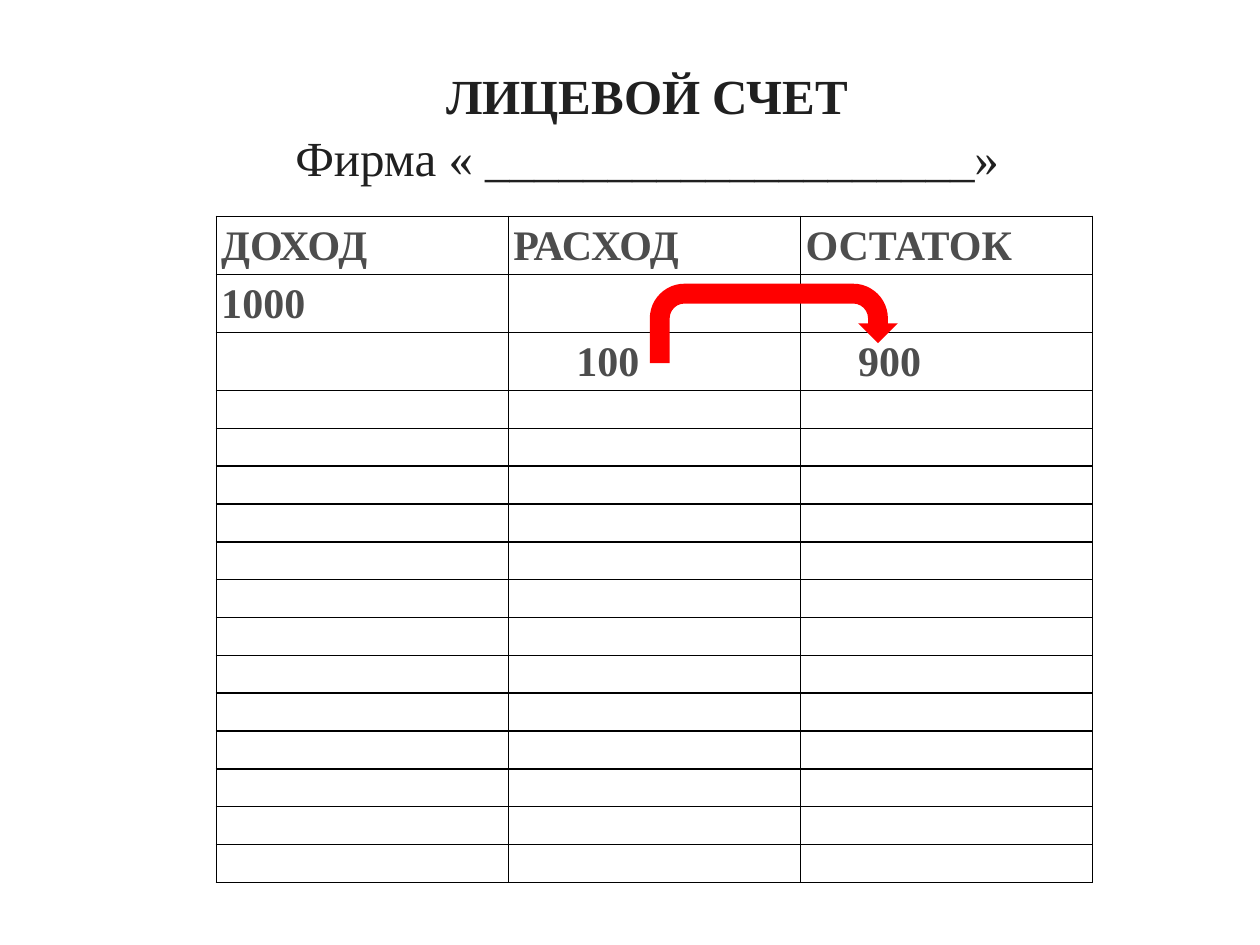
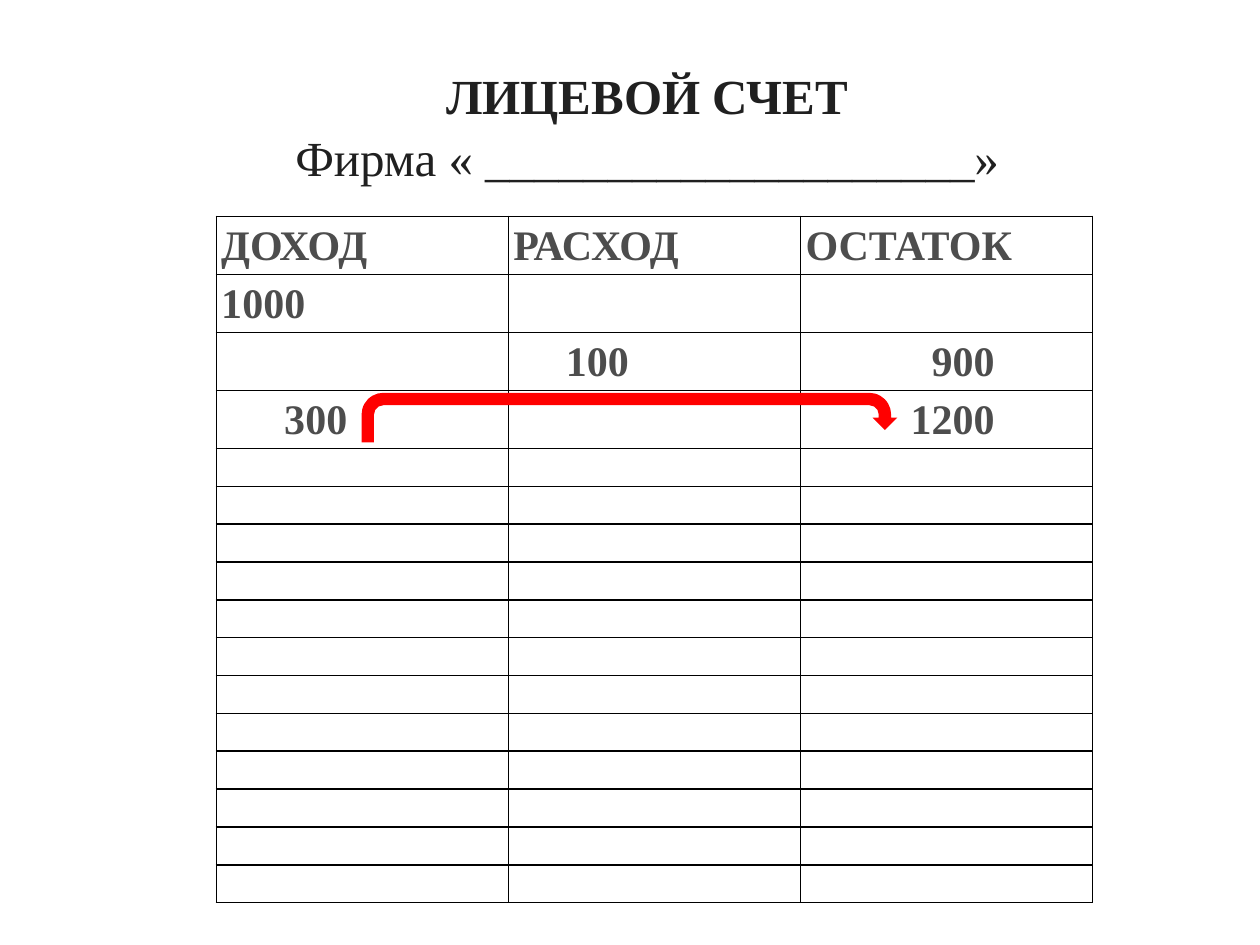
"""Builds two slides of a company's personal account ledger."""
from lxml import etree
from pptx import Presentation
from pptx.dml.color import RGBColor
from pptx.enum.shapes import MSO_SHAPE
from pptx.enum.text import MSO_ANCHOR, MSO_AUTO_SIZE, PP_ALIGN
from pptx.oxml.ns import qn
from pptx.util import Cm, Pt

UTURN = MSO_SHAPE.U_TURN_ARROW
MIDDLE = MSO_ANCHOR.MIDDLE
NO_AUTOSIZE = MSO_AUTO_SIZE.NONE
CENTER = PP_ALIGN.CENTER
TITLE_ONLY = 5

WHITE, BLACK, RED = "FFFFFF", "000000", "FF0000"
TITLE_COLOR, ENTRY_COLOR = "202020", "4D4D4D"
FONT = "Times New Roman"
HEADING = {"name": FONT, "size": Pt(28), "bold": True}
COMPANY = {**HEADING, "bold": False}
ENTRY = {"name": FONT, "size": Pt(24), "bold": True}

TITLE_LINES = [("ЛИЦЕВОЙ СЧЕТ", HEADING), ("Фирма « ____________________»", COMPANY)]
HEADERS = [("ДОХОД", 0), ("РАСХОД", 0), ("ОСТАТОК", 0)]
ROW_COUNT = 16
COLUMN_WIDTH = 5.89
FILLED_HEIGHT, BLANK_HEIGHT = 1.17, 0.763
CELL_INSET = 0.1
BLANK = ("", 0)
INCOME = [("1000", 0), BLANK, BLANK]

LEDGERS = [
    {
        "entries": [INCOME, [BLANK, ("100", 1.27), ("900", 1.06)]],
        "arrow": (13.1, 5.72, 5, 1.6),
    },
    {
        "entries": [
            INCOME,
            [BLANK, ("100", 1.06), ("900", 2.54)],
            [("300", 1.27), BLANK, ("1200", 2.12)],
        ],
        "arrow": (7.29, 7.92, 10.8, 1),
    },
]


def rgb(color):
    """Turn a hex string into a colour."""
    return RGBColor.from_string(color)


def apply(target, values):
    """Set each attribute of the target from a dict."""
    for attribute, value in values.items():
        setattr(target, attribute, value)


def add_text(paragraph, text, style, color):
    """Add one formatted run."""
    run = paragraph.add_run()
    run.text = text
    apply(run.font, style)
    run.font.color.rgb = rgb(color)


def add_title(slide):
    """Fill the title placeholder with the heading and the company line."""
    title = slide.shapes.title
    apply(title, {"left": Cm(5.36), "top": Cm(1.19), "width": Cm(15.37), "height": Cm(2.64)})
    title.fill.solid()
    title.fill.fore_color.rgb = rgb(WHITE)
    frame = title.text_frame
    apply(frame, {"auto_size": NO_AUTOSIZE, "word_wrap": False, "vertical_anchor": MIDDLE})
    for index, (text, style) in enumerate(TITLE_LINES):
        paragraph = frame.add_paragraph() if index else frame.paragraphs[0]
        apply(paragraph, {"alignment": CENTER, "line_spacing": 1.05})
        add_text(paragraph, text, style, TITLE_COLOR)


def add_borders(cell):
    """Draw thin black lines around a cell."""
    properties = cell._tc.get_or_add_tcPr()
    for side in ("a:lnL", "a:lnR", "a:lnT", "a:lnB"):
        line = etree.SubElement(properties, qn(side), w=str(Pt(1)))
        fill = etree.SubElement(line, qn("a:solidFill"))
        etree.SubElement(fill, qn("a:srgbClr"), val=BLACK)


def fill_cell(cell, text, indent):
    """Format a ledger cell and write its entry, if any."""
    add_borders(cell)
    cell.fill.background()
    apply(cell, {
        "margin_left": Cm(CELL_INSET + indent), "margin_right": Cm(CELL_INSET),
        "margin_top": 0, "margin_bottom": 0,
    })
    paragraph = cell.text_frame.paragraphs[0]
    if text:
        paragraph.line_spacing = 1.15
        add_text(paragraph, text, ENTRY, ENTRY_COLOR)
    else:
        etree.SubElement(paragraph._p, qn("a:endParaRPr"), sz="1200")


def add_ledger(slide, entries):
    """Add the ledger table with its entries and blank rows."""
    filled = [HEADERS, *entries]
    rows = filled + [[BLANK] * len(HEADERS)] * (ROW_COUNT - len(filled))
    heights = [FILLED_HEIGHT if row in filled else BLANK_HEIGHT for row in rows]
    ledger = slide.shapes.add_table(
        ROW_COUNT, len(HEADERS), Cm(4.36), Cm(4.36),
        Cm(COLUMN_WIDTH * len(HEADERS)), Cm(sum(heights)),
    ).table
    apply(ledger, {"first_row": False, "horz_banding": False})
    for row_index, (row, height) in enumerate(zip(rows, heights)):
        ledger.rows[row_index].height = Cm(height)
        for column_index, (text, indent) in enumerate(row):
            fill_cell(ledger.cell(row_index, column_index), text, indent)


def add_balance_arrow(slide, box):
    """Add the red arrow that leads to the new balance."""
    arrow = slide.shapes.add_shape(UTURN, *(Cm(length) for length in box))
    arrow.shadow.inherit = False
    arrow.fill.solid()
    arrow.fill.fore_color.rgb = rgb(RED)
    arrow.line.fill.background()


def main():
    """Build and save the presentation."""
    deck = Presentation()
    apply(deck, {"slide_width": Cm(25.4), "slide_height": Cm(19.05)})
    for ledger in LEDGERS:
        slide = deck.slides.add_slide(deck.slide_layouts[TITLE_ONLY])
        add_ledger(slide, ledger["entries"])
        add_title(slide)
        add_balance_arrow(slide, ledger["arrow"])
    deck.save("out.pptx")


if __name__ == "__main__":
    main()
